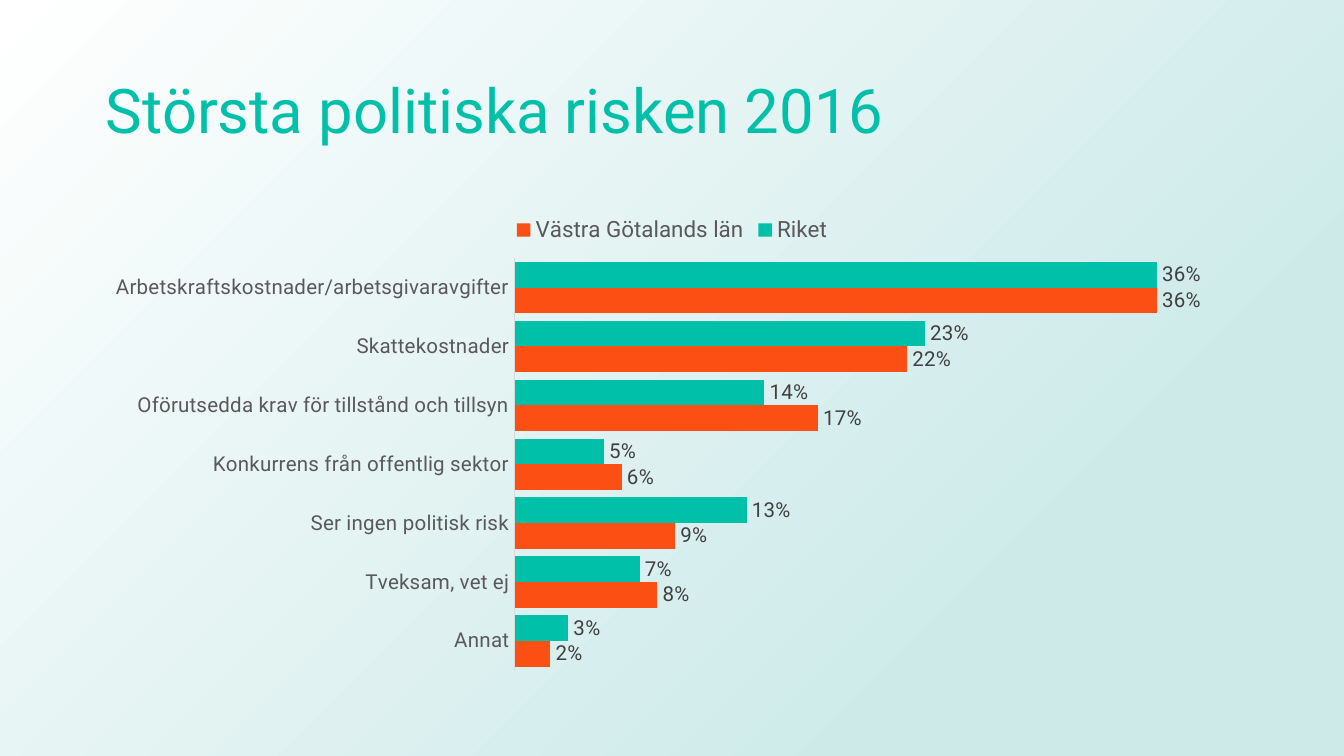
from dataclasses import dataclass

from pptx import Presentation
from pptx.chart.data import CategoryChartData
from pptx.dml.color import RGBColor
from pptx.enum.chart import XL_CHART_TYPE, XL_LABEL_POSITION, XL_LEGEND_POSITION, XL_TICK_MARK
from pptx.enum.shapes import MSO_SHAPE
from pptx.enum.text import MSO_ANCHOR
from pptx.oxml import parse_xml
from pptx.oxml.ns import nsdecls, qn
from pptx.util import Inches, Pt

COLORS = {
    "teal": "00C0A9",
    "orange": "FB4F14",
    "mist": "CDEAE9",
    "white": "FFFFFF",
    "axis_text": "595959",
    "label_text": "404040",
    "axis_line": "D9D9D9",
}
FONT = "Roboto"
PAGE_WIDTH = Inches(10)
PAGE_HEIGHT = PAGE_WIDTH * 9 // 16
LEFT, WIDTH = Inches(0.69), Inches(8.62)
CATEGORIES = (
    "Arbetskraftskostnader/arbetsgivaravgifter",
    "Skattekostnader",
    "Oförutsedda krav för tillstånd och tillsyn",
    "Konkurrens från offentlig sektor",
    "Ser ingen politisk risk",
    "Tveksam, vet ej",
    "Annat",
)


@dataclass(frozen=True)
class Region:
    name: str
    color: str
    shares: tuple[float, ...]


REGIONS = (
    Region("Riket", "teal", (0.36, 0.23, 0.14, 0.05, 0.13, 0.07, 0.03)),
    Region("Västra Götalands län", "orange", (0.36, 0.22, 0.17, 0.06, 0.09, 0.08, 0.02)),
)


def rgb(name: str) -> RGBColor:
    return RGBColor.from_string(COLORS[name])


def style_font(font, size: float, color: str) -> None:
    font.name = FONT
    font.size = Pt(size)
    font.color.rgb = rgb(color)


def add_background(page) -> None:
    """Cover the page with a gradient spreading from the bottom right corner."""
    backdrop = page.shapes.add_shape(MSO_SHAPE.RECTANGLE, 0, 0, PAGE_WIDTH, PAGE_HEIGHT)
    backdrop.shadow.inherit = False
    backdrop.line.fill.background()
    backdrop.fill.gradient()
    properties = backdrop._element.spPr
    gradient = parse_xml(
        f'<a:gradFill {nsdecls("a")} rotWithShape="1"><a:gsLst>'
        f'<a:gs pos="23000"><a:srgbClr val="{COLORS["mist"]}"/></a:gs>'
        f'<a:gs pos="100000"><a:srgbClr val="{COLORS["white"]}"/></a:gs></a:gsLst>'
        '<a:path path="circle"><a:fillToRect l="100000" t="100000"/></a:path></a:gradFill>'
    )
    properties.replace(properties.find(qn("a:gradFill")), gradient)


def add_title(page, text: str) -> None:
    box = page.shapes.add_textbox(LEFT, Inches(0.3), WIDTH, Inches(1.09))
    box.text_frame.word_wrap = True
    box.text_frame.vertical_anchor = MSO_ANCHOR.MIDDLE
    para = box.text_frame.paragraphs[0]
    para.line_spacing = 0.9
    span = para.add_run()
    span.text = text
    style_font(span.font, 33, "teal")


def style_axes(chart) -> None:
    categories = chart.category_axis
    categories.reverse_order = True
    categories.major_tick_mark = XL_TICK_MARK.NONE
    categories.minor_tick_mark = XL_TICK_MARK.NONE
    categories.format.line.color.rgb = rgb("axis_line")
    categories.format.line.width = Pt(0.75)
    style_font(categories.tick_labels.font, 11, "axis_text")

    values = chart.value_axis
    values.visible = False
    values.has_major_gridlines = False
    values.minimum_scale, values.maximum_scale = 0, 0.4


def style_series(series, region: Region) -> None:
    series.format.fill.solid()
    series.format.fill.fore_color.rgb = rgb(region.color)
    series.invert_if_negative = False
    labels = series.data_labels
    labels.show_value = True
    labels.number_format = "0%"
    labels.number_format_is_linked = False
    labels.position = XL_LABEL_POSITION.OUTSIDE_END
    style_font(labels.font, 11, "label_text")


def add_risk_chart(page) -> None:
    chart_data = CategoryChartData(number_format="0%")
    chart_data.categories = CATEGORIES
    for region in REGIONS:
        chart_data.add_series(region.name, region.shares)
    chart = page.shapes.add_chart(
        XL_CHART_TYPE.BAR_CLUSTERED, LEFT, Inches(1.5), WIDTH, Inches(3.56), chart_data
    ).chart
    style_font(chart.font, 10, "axis_text")
    chart.has_title = False
    chart.has_legend = True
    chart.legend.position = XL_LEGEND_POSITION.TOP
    chart.legend.include_in_layout = False
    style_font(chart.legend.font, 12, "axis_text")
    style_axes(chart)

    plot = chart.plots[0]
    plot.vary_by_categories = False
    plot.gap_width = 30
    plot.overlap = 0
    for series, region in zip(plot.series, REGIONS):
        style_series(series, region)


def main() -> None:
    deck = Presentation()
    deck.slide_width, deck.slide_height = PAGE_WIDTH, PAGE_HEIGHT
    page = deck.slides.add_slide(deck.slide_layouts[6])
    add_background(page)
    add_title(page, "Största politiska risken 2016")
    add_risk_chart(page)
    deck.save("out.pptx")


if __name__ == "__main__":
    main()
